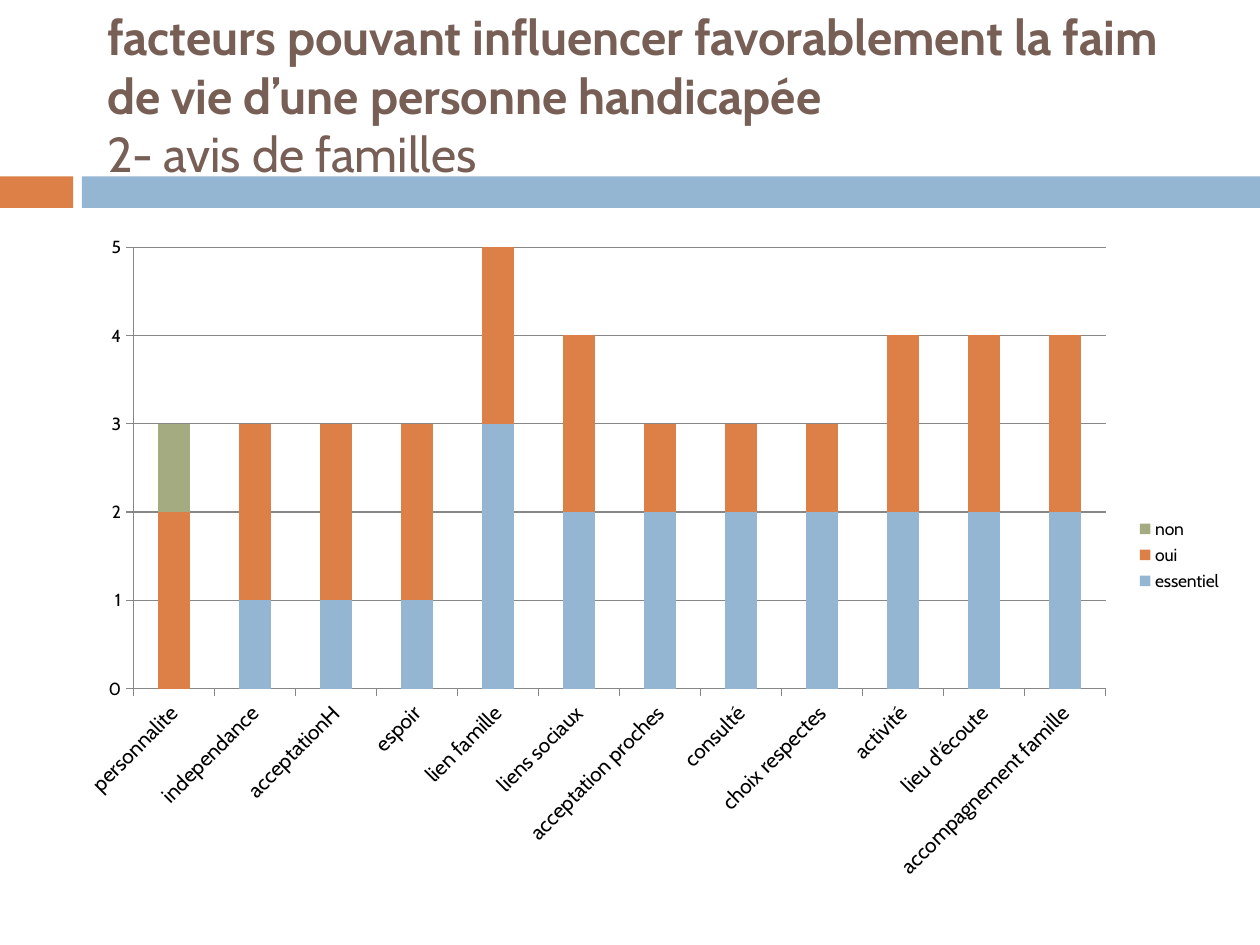
import pptx
import pptx.chart.data
import pptx.dml.color
import pptx.enum.chart
import pptx.enum.shapes
import pptx.enum.text
import pptx.oxml
import pptx.oxml.ns
import pptx.util

FONT = "Cabin"
COLORS = {
    "essentiel": "94B6D2",
    "oui": "DD8047",
    "non": "A5AB81",
    "title": "775F55",
    "text": "000000",
    "axis": "878787",
}
CATEGORIES = [
    "personnalite", "independance", "acceptationH", "espoir",
    "lien famille", "liens sociaux", "acceptation proches", "consulté",
    "choix respectes", "activité", "lieu d'écoute", "accompagnement famille",
]
SERIES = {
    "essentiel": [0, 1, 1, 1, 3, 2, 2, 2, 2, 2, 2, 2],
    "oui": [2, 2, 2, 2, 2, 2, 1, 1, 1, 2, 2, 2],
    "non": [1] + [0] * 11,
}
PLOT_AREA = {"x": 0.06, "y": 0.04, "w": 0.83, "h": 0.66}


def rgb(name):
    return pptx.dml.color.RGBColor.from_string(COLORS[name])


def inches(box):
    return [pptx.util.Inches(v) for v in box]


def style_font(font, size, color, bold=False):
    font.name = FONT
    font.size = pptx.util.Pt(size)
    font.bold = bold
    font.color.rgb = rgb(color)


def add_band(s, box, split=0.58, gap=0.07):
    left, top, width, height = box
    start = split + gap
    parts = [(left, split, "oui"), (left + start, width - start, "essentiel")]
    for x, w, color in parts:
        sp = s.shapes.add_shape(
            pptx.enum.shapes.MSO_SHAPE.RECTANGLE, *inches((x, top, w, height)))
        sp.shadow.inherit = False
        sp.fill.solid()
        sp.fill.fore_color.rgb = rgb(color)
        sp.line.fill.background()


def add_title(s, box, heading, subtitle):
    sp = s.shapes.title
    sp.left, sp.top, sp.width, sp.height = inches(box)
    tf = sp.text_frame
    tf.word_wrap = True
    tf.auto_size = pptx.enum.text.MSO_AUTO_SIZE.NONE
    tf.vertical_anchor = pptx.enum.text.MSO_ANCHOR.MIDDLE
    tf.text = f"{heading}\v{subtitle}"
    p = tf.paragraphs[0]
    p.alignment = pptx.enum.text.PP_ALIGN.LEFT
    style_font(p.font, 28, "title")
    for r, bold in zip(p.runs, (True, False)):
        style_font(r.font, 28, "title", bold)


def set_plot_area(chart, area):
    values = "".join(f'<c:{k} val="{v}"/>' for k, v in area.items())
    layout = pptx.oxml.parse_xml(
        f'<c:layout {pptx.oxml.ns.nsdecls("c")}><c:manualLayout>'
        '<c:layoutTarget val="inner"/>'
        '<c:xMode val="edge"/><c:yMode val="edge"/>'
        f'{values}</c:manualLayout></c:layout>')
    plot_area = chart.element.xpath(".//c:plotArea")[0]
    for old in plot_area.findall(pptx.oxml.ns.qn("c:layout")):
        plot_area.remove(old)
    plot_area.insert(0, layout)


def style_axes(chart):
    cat, val = chart.category_axis, chart.value_axis
    val.minimum_scale, val.maximum_scale, val.major_unit = 0, 5, 1
    val.has_major_gridlines = True
    val.tick_labels.number_format = "#,##0"
    val.tick_labels.number_format_is_linked = False
    for axis, size in ((cat, 12.1), (val, 10)):
        axis.major_tick_mark = pptx.enum.chart.XL_TICK_MARK.OUTSIDE
        style_font(axis.tick_labels.font, size, "text")
    for line in (cat.format.line, val.format.line, val.major_gridlines.format.line):
        line.color.rgb = rgb("axis")
        line.width = pptx.util.Pt(0.75)
    for body in chart.element.xpath(".//c:catAx/c:txPr/a:bodyPr"):
        body.set("rot", "-2700000")


def add_opinion_chart(s, box):
    data = pptx.chart.data.CategoryChartData()
    data.categories = CATEGORIES
    for name, values in SERIES.items():
        data.add_series(name, values)
    chart = s.shapes.add_chart(
        pptx.enum.chart.XL_CHART_TYPE.COLUMN_STACKED, *inches(box), data).chart
    style_font(chart.font, 10, "text")
    chart.has_title = False
    chart.has_legend = True
    chart.legend.position = pptx.enum.chart.XL_LEGEND_POSITION.RIGHT
    chart.legend.include_in_layout = False
    style_font(chart.legend.font, 10, "text")
    plot = chart.plots[0]
    plot.gap_width, plot.overlap = 150, 100
    plot.vary_by_categories = False
    for series in plot.series:
        series.format.fill.solid()
        series.format.fill.fore_color.rgb = rgb(series.name)
    style_axes(chart)
    set_plot_area(chart, PLOT_AREA)


def main():
    prs = pptx.Presentation()
    prs.slide_width, prs.slide_height = inches((10, 7.5))
    s = prs.slides.add_slide(prs.slide_layouts[5])
    add_band(s, (0, 1.4, 10, 0.25))
    add_title(
        s, (0.75, 0.21, 8.92, 1.08),
        "facteurs pouvant influencer favorablement la faim de vie "
        "d’une personne handicapée",
        "2- avis de familles")
    add_opinion_chart(s, (0.5, 1.75, 9.3, 5.31))
    prs.save("out.pptx")


if __name__ == "__main__":
    main()
